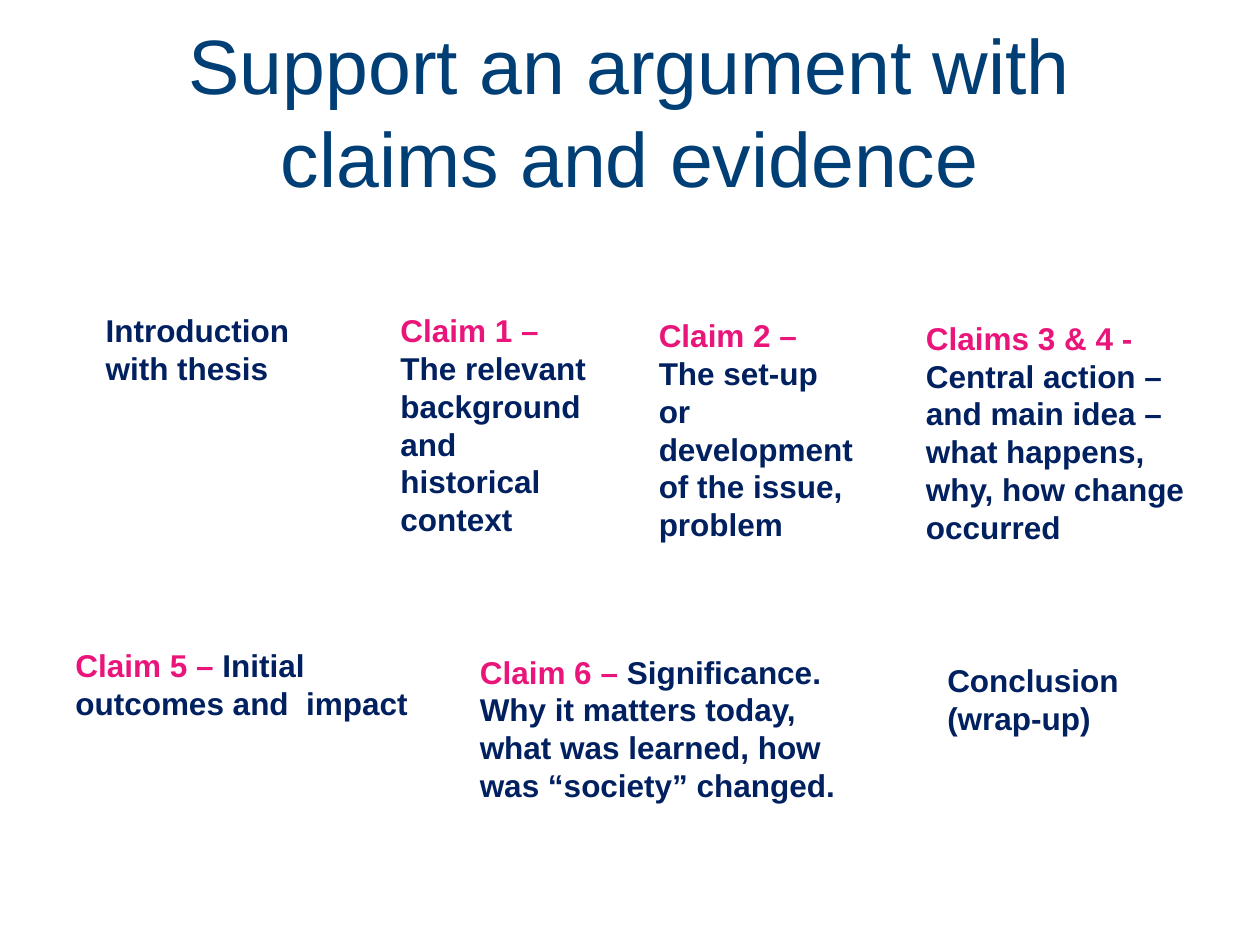
from dataclasses import dataclass

from pptx import Presentation
from pptx.dml.color import RGBColor
from pptx.enum.shapes import MSO_SHAPE
from pptx.enum.text import MSO_ANCHOR, PP_ALIGN
from pptx.util import Inches, Pt

RECT = MSO_SHAPE.RECTANGLE
TOP, MIDDLE = MSO_ANCHOR.TOP, MSO_ANCHOR.MIDDLE
LEFT, CENTER = PP_ALIGN.LEFT, PP_ALIGN.CENTER
WIDE, HIGH = 10, 7.5


@dataclass(frozen=True)
class Theme:
    font: str = "Arial"
    head: str = "003F75"
    body: str = "002060"
    claim: str = "EA157A"
    paper: str = "FFFFFF"
    big: int = 44
    small: int = 18


THEME = Theme()

# Each place is left, top, width, height in percent of the slide.
TITLE = (5, 3.33, 90, 16.67)
ENDS = [
    ((7.4, 32.27, 20, 9.33), "Introduction with thesis"),
    ((74.2, 69.33, 20, 9.33), "Conclusion (wrap-up)"),
]
CLAIMS = [
    ((30.8, 32.27, 17.5, 25.33), "Claim 1 – ",
     "The relevant background and historical context"),
    ((51.3, 32.8, 17.5, 25.6), "Claim 2 – ",
     "The set-up or development of the issue, problem"),
    ((72.5, 33.07, 25, 25.6), "Claims 3 & 4 - ",
     "Central action – and main idea –what happens, why, how change occurred"),
    ((5, 67.73, 29.2, 9.33), "Claim 5 – ", "Initial outcomes and  impact"),
    ((37.1, 68.4, 31.7, 17.33), "Claim 6 – ",
     "Significance. Why it matters today, what was learned, "
     "how was “society” changed."),
]


def scale(place):
    """Turn percent of the slide into lengths."""
    sides = (WIDE, HIGH, WIDE, HIGH)
    return [Inches(part * side / 100) for part, side in zip(place, sides)]


def write(shape, *runs, size=THEME.small, bold=True, align=LEFT, anchor=TOP):
    """Fill a shape with one paragraph of (text, colour) runs."""
    frame = shape.text_frame
    frame.word_wrap = True
    frame.vertical_anchor = anchor
    para = frame.paragraphs[0]
    para.alignment = align
    for text, color in runs:
        run = para.add_run()
        run.text = text
        run.font.name = THEME.font
        run.font.size = Pt(size)
        run.font.bold = bold
        run.font.color.rgb = RGBColor.from_string(color)


def add_title(slide, text):
    box = slide.shapes.add_textbox(*scale(TITLE))
    write(box, (text, THEME.head), size=THEME.big, bold=False,
          align=CENTER, anchor=MIDDLE)


def add_end(slide, place, text):
    """Add the filled box that opens or closes the essay."""
    box = slide.shapes.add_shape(RECT, *scale(place))
    box.shadow.inherit = False
    box.fill.solid()
    box.fill.fore_color.rgb = RGBColor.from_string(THEME.paper)
    box.line.fill.background()
    write(box, (text, THEME.body))


def add_claim(slide, place, label, text):
    box = slide.shapes.add_textbox(*scale(place))
    write(box, (label, THEME.claim), (text, THEME.body))


def main():
    deck = Presentation()
    deck.slide_width, deck.slide_height = Inches(WIDE), Inches(HIGH)
    slide = deck.slides.add_slide(deck.slide_layouts[6])
    add_title(slide, "Support an argument with claims and evidence")
    for end in ENDS:
        add_end(slide, *end)
    for claim in CLAIMS:
        add_claim(slide, *claim)
    deck.save("out.pptx")


if __name__ == "__main__":
    main()
